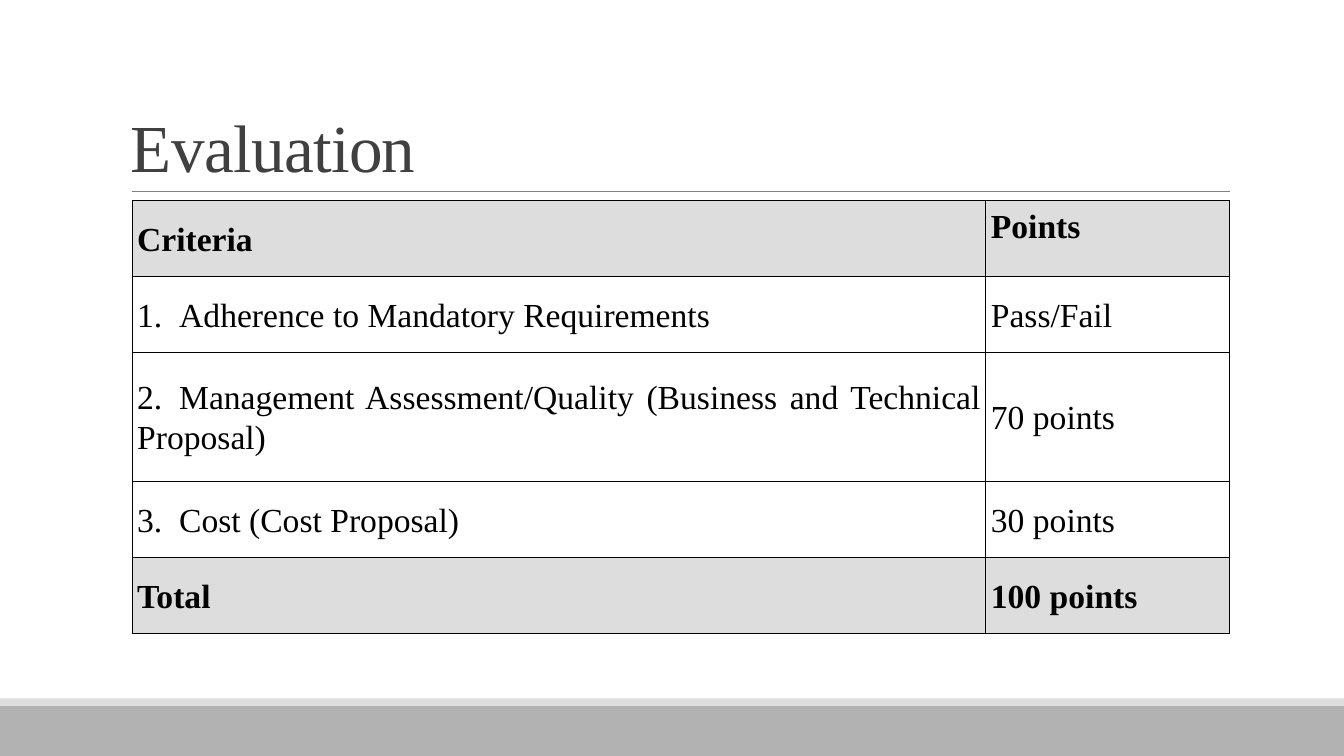
import pptx
import pptx.dml.color
import pptx.enum.shapes
import pptx.enum.text
import pptx.oxml
import pptx.oxml.ns
import pptx.util

Pt = pptx.util.Pt
ANCHOR = pptx.enum.text.MSO_ANCHOR
ALIGN = pptx.enum.text.PP_ALIGN
NAMESPACE = pptx.oxml.ns.nsdecls("a")


def color(value):
    return pptx.dml.color.RGBColor.from_string(value)


class SlideBuilder:
    font = "Times New Roman"
    ink = "000000"
    shade = "DDDDDD"
    cell_inset = 3.6
    tab_position = 30

    def __init__(self, page):
        self.page = page

    def band(self, left, top, width, height, fill):
        box = self.page.shapes.add_shape(
            pptx.enum.shapes.MSO_SHAPE.RECTANGLE,
            Pt(left), Pt(top), Pt(width), Pt(height))
        box.shadow.inherit = False
        box.fill.solid()
        box.fill.fore_color.rgb = color(fill)
        box.line.fill.background()

    def rule(self, left, right, top, stroke, weight):
        line = self.page.shapes.add_connector(
            pptx.enum.shapes.MSO_CONNECTOR.STRAIGHT,
            Pt(left), Pt(top), Pt(right), Pt(top))
        line.line.color.rgb = color(stroke)
        line.line.width = Pt(weight)
        line._element.spPr.append(
            pptx.oxml.parse_xml(f"<a:effectLst {NAMESPACE}/>"))

    def add_span(self, para, text, size, ink, bold=False):
        span = para.add_run()
        span.text = text
        span.font.name = self.font
        span.font.size = Pt(size)
        span.font.bold = bold
        span.font.color.rgb = color(ink)
        return span

    def title(self, text, left, top, width, height):
        box = self.page.shapes.add_textbox(
            Pt(left), Pt(top), Pt(width), Pt(height))
        frame = box.text_frame
        frame.word_wrap = True
        frame.vertical_anchor = ANCHOR.BOTTOM
        para = frame.paragraphs[0]
        para.line_spacing = 0.85
        span = self.add_span(para, text, 48, "404040")
        span._r.get_or_add_rPr().set("spc", "-50")

    def cell(self, cell, text, shaded, anchor):
        cell.vertical_anchor = anchor
        cell.margin_left = cell.margin_right = Pt(self.cell_inset)
        cell.margin_top = cell.margin_bottom = Pt(self.cell_inset)
        if shaded:
            cell.fill.solid()
            cell.fill.fore_color.rgb = color(self.shade)
        else:
            cell.fill.background()
        properties = cell._tc.get_or_add_tcPr()
        for index, side in enumerate("LRTB"):
            properties.insert(index, pptx.oxml.parse_xml(
                f'<a:ln{side} {NAMESPACE} w="{Pt(1)}"><a:solidFill>'
                f'<a:srgbClr val="{self.ink}"/></a:solidFill></a:ln{side}>'))
        para = cell.text_frame.paragraphs[0]
        para.alignment = ALIGN.JUSTIFY
        para.line_spacing = 1.07
        if "\t" in text:
            para._p.get_or_add_pPr().append(pptx.oxml.parse_xml(
                f'<a:tabLst {NAMESPACE}><a:tab pos="{Pt(self.tab_position)}" '
                'algn="l"/></a:tabLst>'))
        self.add_span(para, text, 24, self.ink, shaded)

    def table(self, left, top, widths, heights, rows):
        table = self.page.shapes.add_table(
            len(rows), len(widths), Pt(left), Pt(top),
            Pt(sum(widths)), Pt(sum(heights))).table
        table.first_row = False
        table.horz_banding = False
        for column, width in zip(table.columns, widths):
            column.width = Pt(width)
        for row, height in zip(table.rows, heights):
            row.height = Pt(height)
        for row_index, texts in enumerate(rows):
            shaded = row_index in (0, len(rows) - 1)
            for column_index, text in enumerate(texts):
                is_points_header = (row_index, column_index) == (0, 1)
                anchor = ANCHOR.TOP if is_points_header else ANCHOR.MIDDLE
                self.cell(table.cell(row_index, column_index),
                          text, shaded, anchor)


def main():
    deck = pptx.Presentation()
    deck.slide_width = Pt(960)
    deck.slide_height = Pt(540)
    builder = SlideBuilder(deck.slides.add_slide(deck.slide_layouts[6]))
    builder.band(0, 504, 960, 36, "B2B2B2")
    builder.band(0, 498.8, 960, 5.2, builder.shade)
    builder.rule(94.2, 878.8, 136.6, "808080", 0.5)
    builder.title("Evaluation", 86.4, 22.6, 792, 114.2)
    builder.table(94.4, 143.3, [609.8, 174.2], [54.3, 54.3, 92.2, 54.3, 54.3], [
        ("Criteria", "Points"),
        ("1.\tAdherence to Mandatory Requirements", "Pass/Fail"),
        ("2.\tManagement Assessment/Quality (Business and Technical Proposal)",
         "70 points"),
        ("3.\tCost (Cost Proposal)", "30 points"),
        ("Total", "100 points"),
    ])
    deck.save("out.pptx")


if __name__ == "__main__":
    main()
